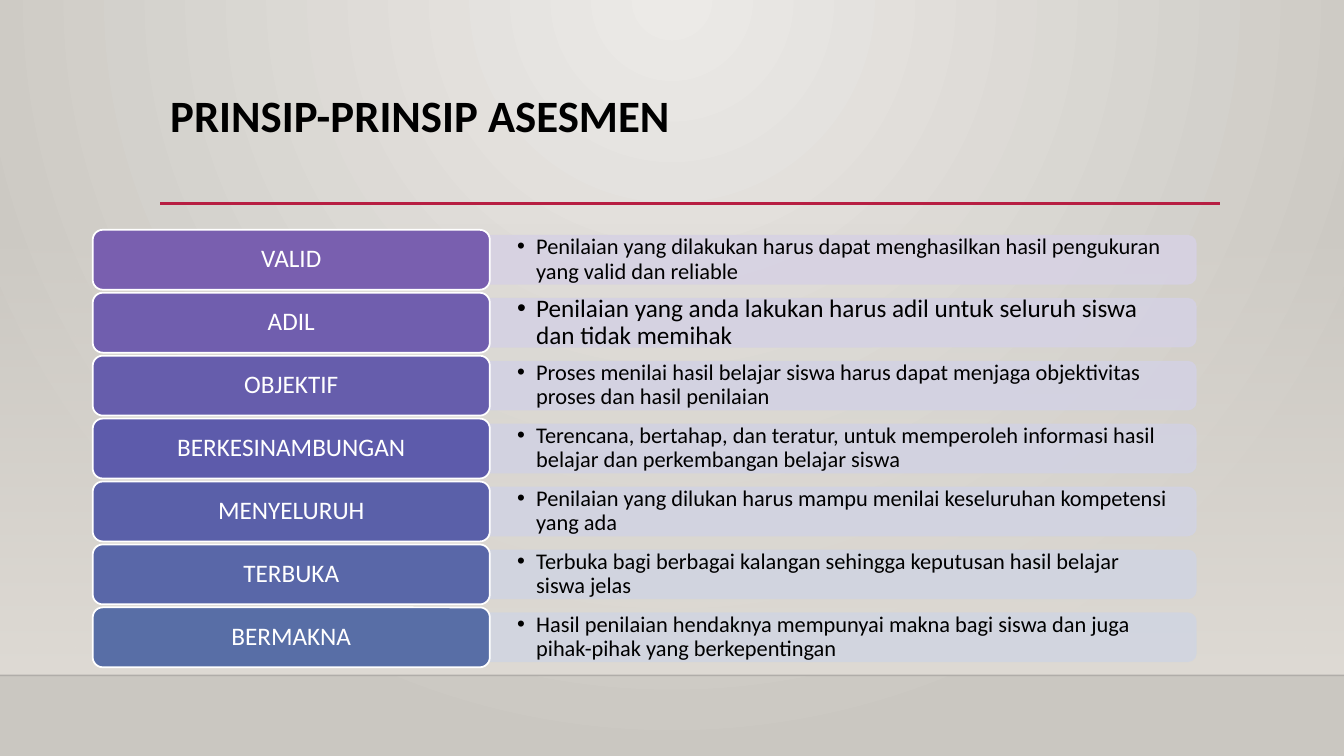
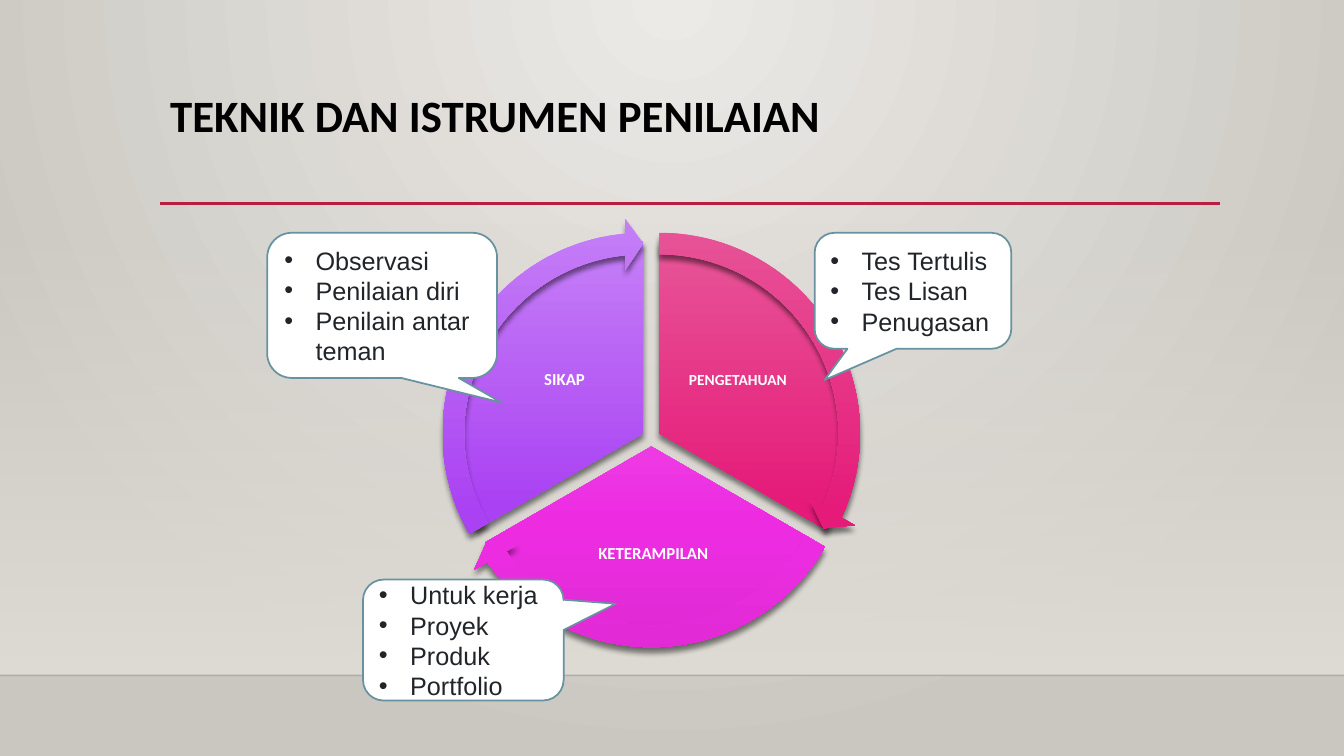
from dataclasses import dataclass

from lxml import etree
from pptx import Presentation, util as u
from pptx.dml import color
from pptx.enum import shapes, text
from pptx.oxml import ns


@dataclass(frozen=True)
class Theme:
    """Colours, fonts and type sizes of the deck."""

    glow: tuple = ((0, "ECEAE7", 100), (100, "CAC7C1", 100))
    haze: tuple = ((0, "DFDBD5", 0), (100, "DFDBD5", 100))
    pink: tuple = ((0, "E75597", 100), (69, "E51A79", 100), (100, "CF2374", 100))
    magenta: tuple = ((0, "F068E8", 100), (69, "ED2CE2", 100), (100, "E02BD5", 100))
    violet: tuple = ((0, "C57FF7", 100), (69, "AA41F3", 100), (100, "A13FE5", 100))
    accent: str = "B71E42"
    floor: str = "000001"
    black: str = "000000"
    white: str = "FFFFFF"
    note_line: str = "6892A0"
    note_text: str = "212529"
    heading_font: str = "Calibri"
    note_font: str = "Arial"
    title_size: int = 32
    large: int = 18
    body: int = 16
    label: int = 12
    small_label: int = 11
    outline: float = 1.25


THEME = Theme()
SHAPE = shapes.MSO_SHAPE
ALIGN = text.PP_ALIGN
ANCHOR = text.MSO_ANCHOR

PRINCIPLES = [
    ("VALID", "Penilaian yang dilakukan harus dapat menghasilkan hasil pengukuran "
     "yang valid dan reliable", "795FAF", "D7D2E3", THEME.body),
    ("ADIL", "Penilaian yang anda lakukan harus adil untuk seluruh siswa "
     "dan tidak memihak", "705EAE", "D5D2E3", THEME.large),
    ("OBJEKTIF", "Proses menilai hasil belajar siswa harus dapat menjaga objektivitas "
     "proses dan hasil penilaian", "665DAC", "D3D2E3", THEME.body),
    ("BERKESINAMBUNGAN", "Terencana, bertahap, dan teratur, untuk memperoleh informasi "
     "hasil belajar dan perkembangan belajar siswa", "5D5BAB", "D2D2E2", THEME.body),
    ("MENYELURUH", "Penilaian yang dilukan harus mampu menilai keseluruhan "
     "kompetensi yang ada", "5A60A9", "D2D3E2", THEME.body),
    ("TERBUKA", "Terbuka bagi berbagai kalangan sehingga keputusan hasil belajar "
     "siswa jelas", "5967A8", "D1D4E1", THEME.body),
    ("BERMAKNA", "Hasil penilaian hendaknya mempunyai makna bagi siswa dan juga "
     "pihak-pihak yang berkepentingan", "586EA6", "D1D5E1", THEME.body),
]

DOMAINS = [
    ("PENGETAHUAN", THEME.small_label, THEME.pink, 162, 18, (0.08, -0.13),
     (2.09, 0.68, 1.36, 1.14)),
    ("KETERAMPILAN", THEME.label, THEME.magenta, 18, 90, (0, 0),
     (0.91, 2.48, 2.04, 1)),
    ("SIKAP", THEME.label, THEME.violet, 90, 162, (-0.08, -0.13),
     (0.37, 0.68, 1.36, 1.14)),
]

INSTRUMENTS = [
    ((3.6, 5.75, 1.99, 1.2), (0.76, -0.3),
     ["Untuk kerja", "Proyek", "Produk", "Portfolio"]),
    ((8.08, 2.31, 1.95, 1.15), (-0.45, 0.77),
     ["Tes Tertulis", "Tes Lisan", "Penugasan"]),
    ((2.65, 2.31, 2.28, 1.44), (0.52, 0.67),
     ["Observasi", "Penilaian diri", "Penilain antar teman"]),
]


def rgb(code):
    """Turn a hex code into a colour."""
    return color.RGBColor.from_string(code)


def inches(box):
    """Turn a box of numbers into lengths."""
    return [u.Inches(side) for side in box]


def child(parent, tag, **attributes):
    """Append a drawing element to a parent."""
    values = {key: str(value) for key, value in attributes.items()}
    return etree.SubElement(parent, ns.qn(tag), values)


def set_opacity(holder, percent):
    """Make every colour inside a holder translucent."""
    for shade in holder.iter(ns.qn("a:srgbClr")):
        child(shade, "a:alpha", val=percent * 1000)


def set_gradient(fill, holder, stops, radial=False):
    """Give a holder a downward or a radial gradient."""
    fill.gradient()
    gradient = holder.find(ns.qn("a:gradFill"))
    for part in list(gradient):
        gradient.remove(part)
    stop_list = child(gradient, "a:gsLst")
    for position, code, opacity in stops:
        stop = child(stop_list, "a:gs", pos=position * 1000)
        shade = child(stop, "a:srgbClr", val=code)
        if opacity < 100:
            child(shade, "a:alpha", val=opacity * 1000)
    if radial:
        circle = child(gradient, "a:path", path="circle")
        child(circle, "a:fillToRect", l=43000, t=0, r=43000, b=100000)
    else:
        child(gradient, "a:lin", ang=5400000, scaled=0)


def add_panel(slide, kind, box, fill=None, line=None, adjustments=()):
    """Place a flat preset shape."""
    panel = slide.shapes.add_shape(kind, *inches(box))
    panel.shadow.inherit = False
    for index, value in enumerate(adjustments):
        panel.adjustments[index] = value
    if isinstance(fill, tuple):
        set_gradient(panel.fill, panel.element.spPr, fill)
    else:
        panel.fill.solid()
        panel.fill.fore_color.rgb = rgb(fill)
    if line:
        panel.line.color.rgb = rgb(line)
        panel.line.width = u.Pt(THEME.outline)
    else:
        panel.line.fill.background()
    return panel


def add_rule(slide, start, end, code, width):
    """Draw a straight line without shadow."""
    rule = slide.shapes.add_connector(shapes.MSO_CONNECTOR.STRAIGHT, *inches(start + end))
    rule.line.color.rgb = rgb(code)
    rule.line.width = u.Pt(width)
    child(rule.element.spPr, "a:effectLst")
    return rule


def write(frame, lines, size, code, font=THEME.heading_font, bold=False, align=ALIGN.LEFT,
          anchor=ANCHOR.MIDDLE, insets=(0.1, 0.05), indent=0, spacing=0.9):
    """Fill a text frame, with bullets when there is an indent."""
    frame.word_wrap = True
    frame.vertical_anchor = anchor
    frame.margin_left = frame.margin_right = u.Inches(insets[0])
    frame.margin_top = frame.margin_bottom = u.Inches(insets[1])
    for index, line in enumerate(lines):
        paragraph = frame.add_paragraph() if index else frame.paragraphs[0]
        paragraph.alignment = align
        paragraph.line_spacing = spacing
        if indent:
            properties = paragraph._p.get_or_add_pPr()
            properties.set("marL", str(u.Inches(indent)))
            properties.set("indent", str(-u.Inches(indent)))
            child(properties, "a:buFont", typeface="Arial")
            child(properties, "a:buChar", char="•")
        run = paragraph.add_run()
        run.text = line
        run.font.name = font
        run.font.size = u.Pt(size)
        run.font.bold = bold
        run.font.color.rgb = rgb(code)


def add_words(slide, box, lines, size, code, **style):
    """Place a text box."""
    words = slide.shapes.add_textbox(*inches(box))
    write(words.text_frame, lines, size, code, **style)


def start_slide(deck, title):
    """Add a slide with the shared backdrop, rules and title."""
    slide = deck.slides.add_slide(deck.slide_layouts[6])
    add_panel(slide, SHAPE.RECTANGLE, (0, 2.21, 13.33, 4.49), THEME.haze)
    floor = add_rule(slide, (0, 6.7), (13.33, 6.7), THEME.floor, 1)
    set_opacity(floor.element.spPr, 20)
    add_rule(slide, (1.59, 2.02), (12.1, 2.02), THEME.accent, 2.5)
    add_words(slide, (1.59, 0.88, 10.5, 1.15), [title], THEME.title_size, THEME.black,
              bold=True, anchor=ANCHOR.TOP)
    return slide


def add_principle(slide, box, principle):
    """Place one principle: its name and the bar that explains it."""
    name, meaning, name_fill, bar_fill, size = principle
    left, top, width, height = box
    name_width = width * 0.36
    bar_left, bar_width, bar_height = left + name_width, width - name_width, height * 0.8
    bar_top = top + (height - bar_height) / 2
    turn = (bar_width - bar_height) / 2
    bar = add_panel(slide, SHAPE.ROUND_2_SAME_RECTANGLE,
                    (bar_left + turn, bar_top - turn, bar_height, bar_width),
                    bar_fill, bar_fill)
    bar.rotation = 90
    set_opacity(bar.element.spPr, 90)
    add_words(slide, (bar_left, bar_top, bar_width, bar_height), [meaning], size,
              THEME.black, insets=(0.27, 0), indent=0.19)
    plate = add_panel(slide, SHAPE.ROUNDED_RECTANGLE, (left, top, name_width, height),
                      name_fill, THEME.white)
    write(plate.text_frame, [name], THEME.large, THEME.white, align=ALIGN.CENTER)


def add_principles(slide, box, gap=0.03):
    """Stack the principles in equal rows."""
    left, top, width, height = box
    row = (height - gap * (len(PRINCIPLES) - 1)) / len(PRINCIPLES)
    for index, principle in enumerate(PRINCIPLES):
        add_principle(slide, (left, top + index * (row + gap), width, row), principle)


def add_lit_panel(slide, kind, box, fill, adjustments):
    """Place a gradient shape that casts a shadow downward."""
    panel = add_panel(slide, kind, box, fill, adjustments=adjustments)
    effects = panel.element.spPr.find(ns.qn("a:effectLst"))
    shadow = child(effects, "a:outerShdw", blurRad=u.Pt(4), dist=u.Pt(4),
                   dir=5400000, rotWithShape=0)
    child(shadow, "a:srgbClr", val=THEME.black)
    set_opacity(shadow, 48)


def add_wheel(slide, left, top, size):
    """Draw the three domains as a wheel circled by arrows."""
    for name, label_size, fill, start, end, (dx, dy), label in DOMAINS:
        add_lit_panel(slide, SHAPE.PIE, (left + dx, top + dy, size, size), fill, (start, end))
        add_words(slide, (left + label[0], top + label[1], *label[2:]), [name], label_size,
                  THEME.white, bold=True, align=ALIGN.CENTER, insets=(0.02, 0.02))
    rim, head = 0.23, 3.28
    ring = size + 2 * rim
    for _, _, fill, start, end, (dx, dy), _ in DOMAINS:
        add_lit_panel(slide, SHAPE.CIRCULAR_ARROW,
                      (left + dx - rim, top + dy - rim, ring, ring), fill,
                      (0.05, head, end - head, start, 0.06))


def add_instrument_note(slide, box, tip, instruments):
    """Place a speech bubble that lists instruments."""
    note = add_panel(slide, SHAPE.ROUNDED_RECTANGULAR_CALLOUT, box, THEME.white,
                     THEME.note_line, (*tip, 0.17))
    write(note.text_frame, instruments, THEME.large, THEME.note_text,
          font=THEME.note_font, indent=0.31, spacing=1.0)


def main():
    """Build the deck."""
    deck = Presentation()
    deck.slide_width, deck.slide_height = inches((13.33, 7.5))
    master = deck.slide_master
    backdrop = master.background.fill
    set_gradient(backdrop, master.element.find(".//" + ns.qn("p:bgPr")), THEME.glow, True)

    add_principles(start_slide(deck, "PRINSIP-PRINSIP ASESMEN"), (0.92, 2.28, 10.94, 4.34))

    techniques = start_slide(deck, "TEKNIK DAN ISTRUMEN PENILAIAN")
    add_wheel(techniques, 4.55, 2.52, 3.82)
    for box, tip, instruments in INSTRUMENTS:
        add_instrument_note(techniques, box, tip, instruments)

    deck.save("out.pptx")


if __name__ == "__main__":
    main()
